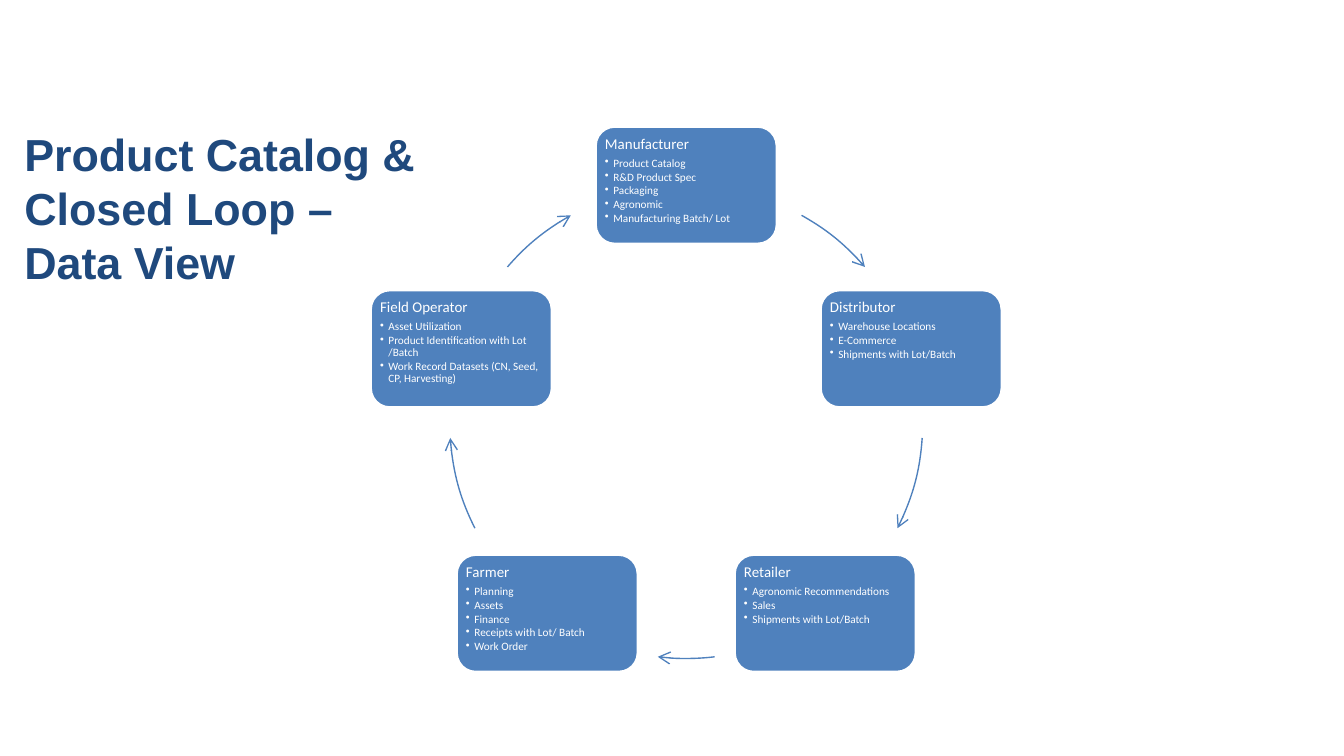
from math import cos, radians, sin

from lxml.etree import SubElement
from pptx import Presentation
from pptx.dml.color import RGBColor
from pptx.enum.shapes import MSO_SHAPE
from pptx.enum.text import MSO_ANCHOR, PP_ALIGN
from pptx.oxml.ns import qn
from pptx.util import Cm, Pt

NAVY = RGBColor(0x1F, 0x49, 0x7D)
BLUE = RGBColor(0x4F, 0x81, 0xBD)
WHITE = RGBColor(0xFF, 0xFF, 0xFF)

# Ring of stages, in centimetres
MID_X, MID_Y, RADIUS = 12.97, 7.97, 4.47
BOX_W, BOX_H = 3.45, 2.24

STAGES = [
    ("Manufacturer", ["Product Catalog", "R&D Product Spec", "Packaging",
                      "Agronomic", "Manufacturing Batch/ Lot"]),
    ("Distributor", ["Warehouse Locations", "E-Commerce",
                     "Shipments with Lot/Batch"]),
    ("Retailer", ["Agronomic Recommendations", "Sales",
                  "Shipments with Lot/Batch"]),
    ("Farmer", ["Planning", "Assets", "Finance",
                "Receipts with Lot/ Batch", "Work Order"]),
    ("Field Operator", ["Asset Utilization",
                        "Product Identification with Lot /Batch",
                        "Work Record Datasets (CN, Seed, CP, Harvesting)"]),
]
# Start and end angle of each arrow, clockwise from the right
ARCS = [(299.2, 319.1), (3.9, 26.7), (83.1, 96.9), (153.3, 176.1),
        (220.9, 240.8)]


def style_font(font, name, size, color, bold=False):
    font.name, font.size, font.bold = name, Pt(size), bold
    font.color.rgb = color


def add_title(slide, text):
    box = slide.shapes.add_textbox(Cm(0.21), Cm(2.54), Cm(7.95), Cm(2.77))
    frame = box.text_frame
    frame.word_wrap = True
    frame.vertical_anchor = MSO_ANCHOR.MIDDLE
    frame.text = text
    style_font(frame.paragraphs[0].runs[0].font, "Arial", 24, NAVY, bold=True)


def add_bullet(para):
    props = para._p.get_or_add_pPr()
    props.set("marL", str(Cm(0.16)))
    props.set("indent", str(-Cm(0.16)))
    SubElement(props, qn("a:buChar")).set("char", "•")


def format_line(para, size, after):
    para.alignment = PP_ALIGN.LEFT
    para.line_spacing = 0.9
    para.space_after = Pt(after)
    style_font(para.runs[0].font, "Calibri", size, WHITE)


def add_stage(slide, angle, name, items):
    turn = radians(angle)
    x, y = MID_X + RADIUS * cos(turn), MID_Y + RADIUS * sin(turn)
    box = slide.shapes.add_shape(
        MSO_SHAPE.ROUNDED_RECTANGLE, Cm(x - BOX_W / 2), Cm(y - BOX_H / 2),
        Cm(BOX_W), Cm(BOX_H))
    box.shadow.inherit = False
    box.fill.solid()
    box.fill.fore_color.rgb = BLUE
    box.line.color.rgb = WHITE
    box.line.width = Pt(2)

    frame = box.text_frame
    frame.word_wrap = True
    frame.vertical_anchor = MSO_ANCHOR.TOP
    frame.margin_left = frame.margin_right = Cm(0.08)
    frame.margin_top = frame.margin_bottom = Cm(0.09)
    frame.text = name
    format_line(frame.paragraphs[0], 8, 2.7)
    for item in items:
        para = frame.add_paragraph()
        para.text = item
        para.level = 1
        add_bullet(para)
        format_line(para, 6, 0.9)


def add_arrow(slide, start, end):
    arrow = slide.shapes.add_shape(
        MSO_SHAPE.ARC, Cm(MID_X - RADIUS), Cm(MID_Y - RADIUS),
        Cm(2 * RADIUS), Cm(2 * RADIUS))
    # Angles are stored in 60000ths of a degree, adjustments in 100000ths
    arrow.adjustments[0] = start * 0.6
    arrow.adjustments[1] = end * 0.6
    arrow.shadow.inherit = False
    arrow.fill.background()
    arrow.line.color.rgb = BLUE
    arrow.line.width = Pt(0.75)
    SubElement(arrow.line._get_or_add_ln(), qn("a:tailEnd")).set("type", "arrow")


def main():
    deck = Presentation()
    deck.slide_width, deck.slide_height = Cm(25.4), Cm(14.28)
    slide = deck.slides.add_slide(deck.slide_layouts[6])

    add_title(slide, "Product Catalog & Closed Loop – Data View")

    # Stages run clockwise from the top, each followed by its arrow
    for i, ((name, items), arc) in enumerate(zip(STAGES, ARCS)):
        add_stage(slide, -90 + i * 360 / len(STAGES), name, items)
        add_arrow(slide, *arc)

    deck.save("out.pptx")


if __name__ == "__main__":
    main()
